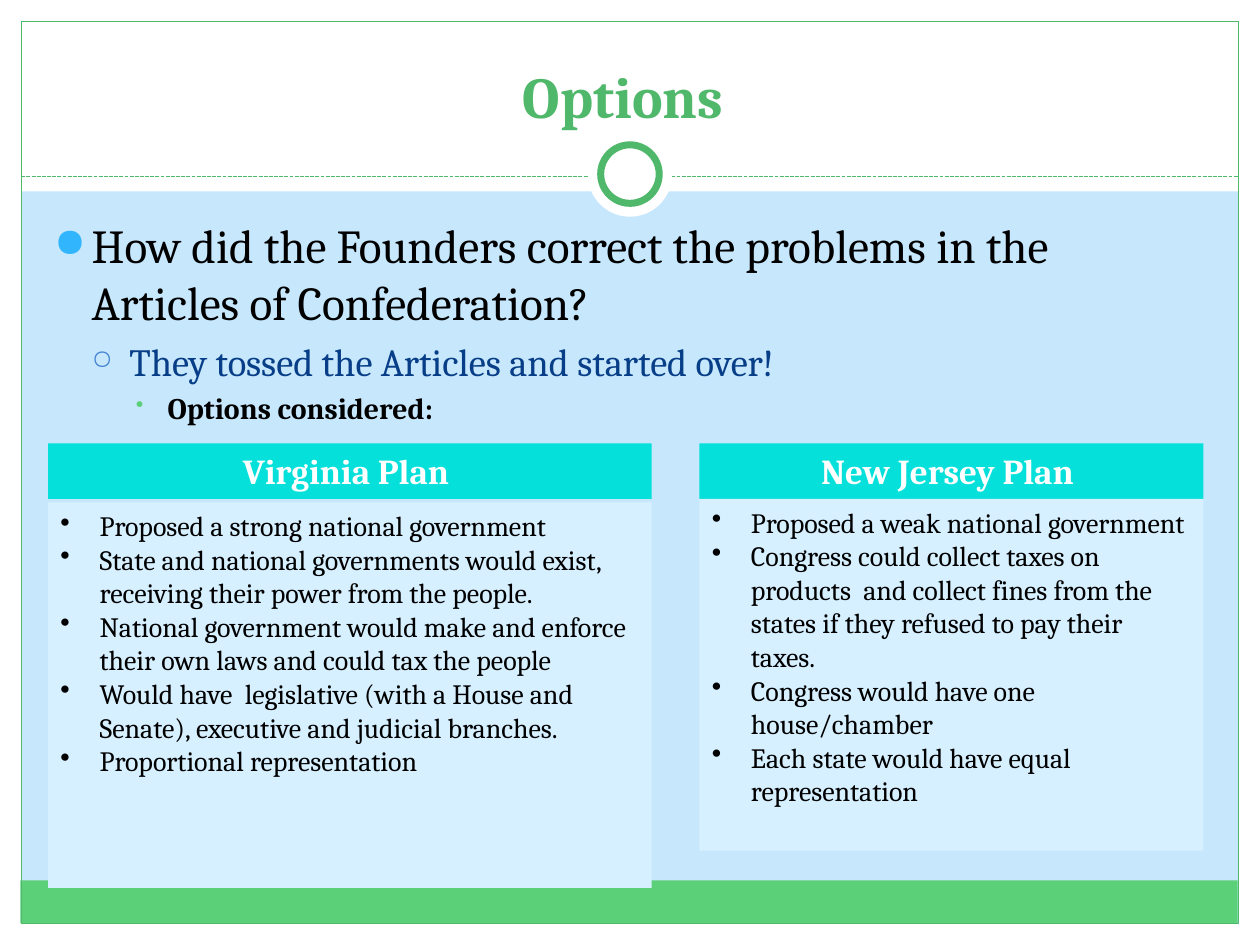
"""Build the slide comparing the Virginia Plan with the New Jersey Plan."""
from dataclasses import dataclass
from typing import Optional

from lxml.etree import SubElement
from pptx import Presentation
from pptx.dml.color import RGBColor
from pptx.enum.dml import MSO_LINE
from pptx.enum.shapes import MSO_CONNECTOR, MSO_SHAPE
from pptx.enum.text import MSO_ANCHOR, MSO_AUTO_SIZE, PP_ALIGN
from pptx.oxml.ns import qn
from pptx.util import Cm, Pt

WHITE = RGBColor(0xFF, 0xFF, 0xFF)
BLACK = RGBColor(0x00, 0x00, 0x00)
SKY = RGBColor(0xC6, 0xE7, 0xFC)
PALE = RGBColor(0xD6, 0xF0, 0xFF)
TURQUOISE = RGBColor(0x05, 0xE0, 0xDB)
GREEN = RGBColor(0x5B, 0xD0, 0x78)
DARK_GREEN = RGBColor(0x50, 0xB8, 0x6A)
NAVY = RGBColor(0x07, 0x3E, 0x87)
BRIGHT_BLUE = RGBColor(0x31, 0xB6, 0xFD)
MID_BLUE = RGBColor(0x45, 0x84, 0xD3)
FONT = "Cambria"
WIDTH, HEIGHT, EDGE = 25.4, 19.05, 0.43


@dataclass
class Panel:
    left: float
    top: float
    width: float
    height: float
    fill: Optional[RGBColor] = None
    line: Optional[RGBColor] = None
    weight: float = 0.75
    outline: MSO_SHAPE = MSO_SHAPE.RECTANGLE


@dataclass
class OutlineItem:
    text: str
    size: float
    color: RGBColor
    bold: bool
    margin: float
    hang: float
    bullet: str
    bullet_color: RGBColor
    bullet_percent: int


@dataclass
class Plan:
    name: str
    left: float
    width: float
    points_top: float
    points_height: float
    points: list[str]


FRAMING = [
    Panel(0, HEIGHT - EDGE, WIDTH, EDGE, WHITE),
    Panel(0, 0, WIDTH, 3.86, WHITE),
    Panel(0, 0, EDGE, HEIGHT, WHITE),
    Panel(WIDTH - EDGE, 0, EDGE, HEIGHT, WHITE),
    Panel(0.41, 17.75, 24.54, 0.86, GREEN),
    Panel(EDGE, EDGE, WIDTH - 2 * EDGE, HEIGHT - 2 * EDGE, None, DARK_GREEN),
]
MEDALLION = [
    Panel(11.85, 2.67, 1.7, 1.7, WHITE, outline=MSO_SHAPE.OVAL),
    Panel(12.11, 2.92, 1.18, 1.18, WHITE, DARK_GREEN, 4, MSO_SHAPE.OVAL),
]
OUTLINE = [
    OutlineItem("How did the Founders correct the problems in the Articles of Confederation?",
                27, BLACK, False, 0.76, 0.76, "●", BRIGHT_BLUE, 85),
    OutlineItem("They tossed the Articles and started over!",
                22, NAVY, False, 1.52, 0.76, "○", MID_BLUE, 70),
    OutlineItem("Options considered:", 17, BLACK, True, 2.29, 0.64, "•", GREEN, 75),
]
PLANS = [
    Plan("Virginia Plan ", 0.97, 12.17, 10.13, 7.77, [
        "Proposed a strong national government",
        "State and national governments would exist, receiving their power from the people.",
        "National government would make and enforce their own laws and could tax the people",
        "Would have  legislative (with a House and Senate), executive and judicial branches.",
        "Proportional representation",
    ]),
    Plan("New Jersey Plan ", 14.1, 10.16, 10.06, 7.09, [
        "Proposed a weak national government",
        "Congress could collect taxes on products  and collect fines from the states "
        "if they refused to pay their taxes.",
        "Congress would have one house/chamber",
        "Each state would have equal representation",
    ]),
]


def draw_panel(shapes, panel: Panel):
    shape = shapes.add_shape(panel.outline, Cm(panel.left), Cm(panel.top),
                             Cm(panel.width), Cm(panel.height))
    shape.shadow.inherit = False
    if panel.fill is None:
        shape.fill.background()
    else:
        shape.fill.solid()
        shape.fill.fore_color.rgb = panel.fill
    if panel.line is None:
        shape.line.fill.background()
    else:
        shape.line.color.rgb = panel.line
        shape.line.width = Pt(panel.weight)
    shape.text_frame.word_wrap = True
    shape.text_frame.vertical_anchor = MSO_ANCHOR.TOP
    return shape


def style(paragraph, size: float, color: RGBColor, bold: bool = False,
          align: PP_ALIGN = PP_ALIGN.LEFT) -> None:
    paragraph.alignment = align
    for run in paragraph.runs:
        run.font.name, run.font.size, run.font.bold = FONT, Pt(size), bold
        run.font.color.rgb = color


def add_bullet(paragraph, char: str, margin: float, hang: float,
               color: RGBColor = BLACK, percent: int = 100) -> None:
    properties = paragraph._p.get_or_add_pPr()
    properties.set("marL", str(Cm(margin)))
    properties.set("indent", str(-Cm(hang)))
    bullet_color = SubElement(properties, qn("a:buClr"))
    SubElement(bullet_color, qn("a:srgbClr"), val=str(color))
    SubElement(properties, qn("a:buSzPct"), val=str(percent * 1000))
    SubElement(properties, qn("a:buChar"), char=char)


def draw_divider(shapes) -> None:
    divider = shapes.add_connector(MSO_CONNECTOR.STRAIGHT, Cm(EDGE), Cm(3.56),
                                   Cm(WIDTH - EDGE), Cm(3.56))
    divider.line.color.rgb = DARK_GREEN
    divider.line.width = Pt(0.75)
    divider.line.dash_style = MSO_LINE.SQUARE_DOT
    SubElement(divider._element.spPr, qn("a:effectLst"))


def place_title(title) -> None:
    title.left, title.top, title.width, title.height = Cm(0.84), Cm(0.64), Cm(23.7), Cm(2.11)
    frame = title.text_frame
    frame.text = "Options "
    frame.vertical_anchor = MSO_ANCHOR.BOTTOM
    frame.auto_size = MSO_AUTO_SIZE.NONE
    style(frame.paragraphs[0], 33, DARK_GREEN, True, PP_ALIGN.CENTER)
    title.element.getparent().append(title.element)


def draw_outline(shapes, items: list[OutlineItem]) -> None:
    frame = shapes.add_textbox(Cm(0.84), Cm(4.24), Cm(23.62), Cm(5.72)).text_frame
    frame.word_wrap = True
    frame.text = "\n".join(item.text for item in items)
    for level, (paragraph, item) in enumerate(zip(frame.paragraphs, items)):
        paragraph.level = level
        style(paragraph, item.size, item.color, item.bold)
        paragraph.space_before = Pt(item.size * 0.2)
        add_bullet(paragraph, item.bullet, item.margin, item.hang,
                   item.bullet_color, item.bullet_percent)


def draw_plan(shapes, plan: Plan) -> None:
    members = shapes.add_group_shape().shapes
    heading = draw_panel(members, Panel(plan.left, 8.94, plan.width, 1.12, TURQUOISE)).text_frame
    heading.text = plan.name
    style(heading.paragraphs[0], 20, WHITE, True, PP_ALIGN.CENTER)
    points = draw_panel(members, Panel(plan.left, plan.points_top, plan.width,
                                       plan.points_height, PALE)).text_frame
    points.text = "\n".join(plan.points)
    for paragraph in points.paragraphs:
        style(paragraph, 16, BLACK)
        add_bullet(paragraph, "•", 0.79, 0.79)


def main() -> None:
    deck = Presentation()
    deck.slide_width, deck.slide_height = Cm(WIDTH), Cm(HEIGHT)
    slide = deck.slides.add_slide(deck.slide_layouts[5])
    slide.background.fill.solid()
    slide.background.fill.fore_color.rgb = SKY
    for panel in FRAMING:
        draw_panel(slide.shapes, panel)
    draw_divider(slide.shapes)
    for disc in MEDALLION:
        draw_panel(slide.shapes, disc)
    place_title(slide.shapes.title)
    draw_outline(slide.shapes, OUTLINE)
    for plan in PLANS:
        draw_plan(slide.shapes, plan)
    deck.save("out.pptx")


if __name__ == "__main__":
    main()
